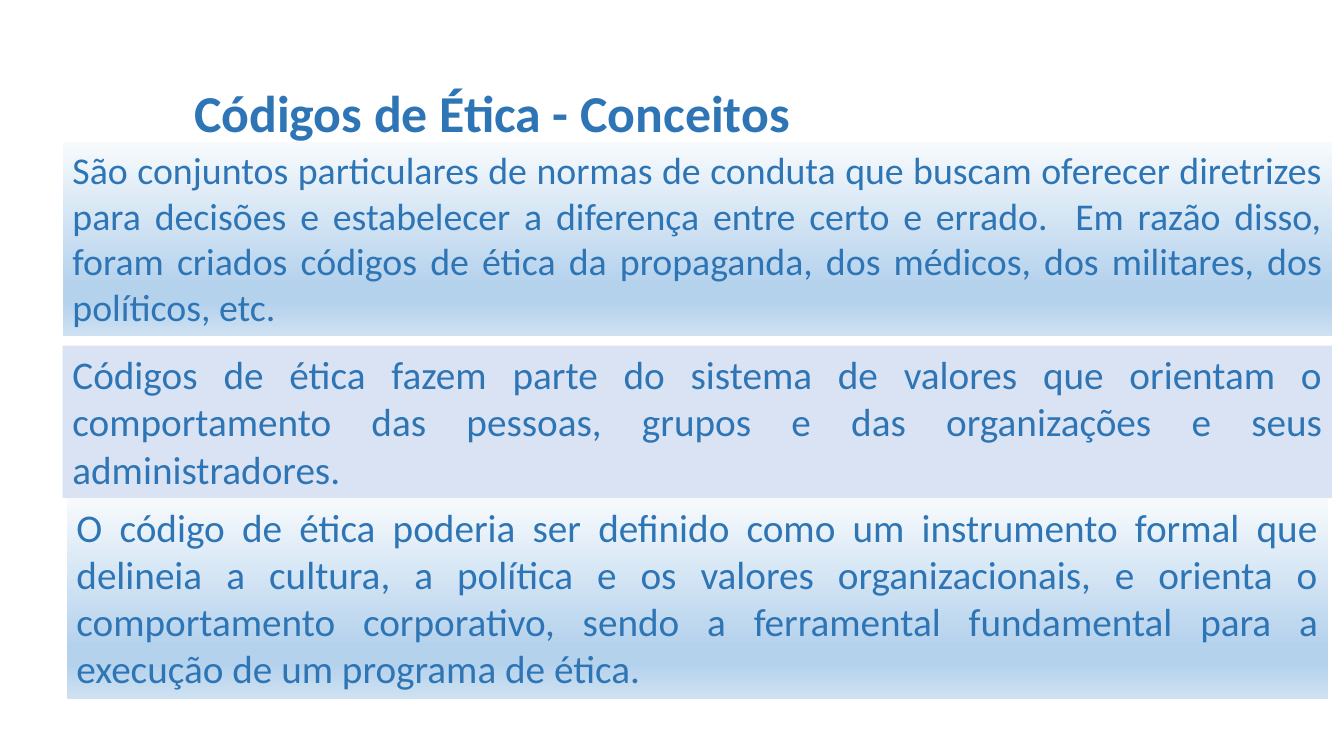
from pptx import Presentation
from pptx import util as u
from pptx.dml.color import RGBColor
from pptx.enum import shapes, text
from pptx.oxml import parse_xml
from pptx.oxml.ns import nsdecls, qn

FONT = "Calibri"
BLUE = "2E75B6"
LAVENDER = "DAE3F3"
SKY_STOPS = [(0, "F7FAFD"), (74, "B5D2EC"), (83, "B5D2EC"), (100, "CEE1F2")]

# Left, top, width, height, text size, fill, wording
PANELS = [
    (0.62, 1.41, 12.59, 1.92, 27, SKY_STOPS,
     "São conjuntos particulares de normas de conduta que buscam oferecer "
     "diretrizes para decisões e estabelecer a diferença entre certo e errado.  "
     "Em razão disso, foram criados códigos de ética da propaganda, dos médicos, "
     "dos militares, dos políticos, etc."),
    (0.62, 3.43, 12.59, 1.51, 28, LAVENDER,
     "Códigos de ética fazem parte do sistema de valores que orientam o "
     "comportamento das pessoas, grupos e das organizações e seus administradores."),
    (0.66, 4.94, 12.51, 1.99, 28, SKY_STOPS,
     "O código de ética poderia ser definido como um instrumento formal que "
     "delineia a cultura, a política e os valores organizacionais, e orienta o "
     "comportamento corporativo, sendo a ferramental fundamental para a execução "
     "de um programa de ética."),
]


def color(value):
    return RGBColor.from_string(value)


def write(box, wording, size, align, anchor, bold=False):
    frame = box.text_frame
    frame.word_wrap = True
    frame.auto_size = text.MSO_AUTO_SIZE.NONE
    frame.vertical_anchor = anchor
    frame.text = wording
    para = frame.paragraphs[0]
    para.alignment = align
    for span in para.runs:
        span.font.name = FONT
        span.font.size = u.Pt(size)
        span.font.bold = bold
        span.font.color.rgb = color(BLUE)
    return para


def fill_gradient(box, stops):
    box.fill.gradient()
    box.fill.gradient_angle = 270  # top to bottom
    stop_list = box.fill._xPr.find(f".//{qn('a:gsLst')}")
    for stop in list(stop_list):
        stop_list.remove(stop)
    for percent, value in stops:
        stop_list.append(parse_xml(
            f'<a:gs {nsdecls("a")} pos="{percent * 1000}">'
            f'<a:srgbClr val="{value}"/></a:gs>'))


def add_title(page, wording):
    title = page.shapes.title
    title.left, title.top = u.Inches(0.73), u.Inches(0.84)
    title.width, title.height = u.Inches(8.3), u.Inches(0.65)
    para = write(title, wording, 37, text.PP_ALIGN.CENTER,
                 text.MSO_ANCHOR.MIDDLE, bold=True)
    para.line_spacing = 0.8


def add_panel(page, left, top, width, height, size, fill, wording):
    box = page.shapes.add_shape(
        shapes.MSO_SHAPE.RECTANGLE, u.Inches(left), u.Inches(top),
        u.Inches(width), u.Inches(height))
    box.shadow.inherit = False
    box.line.fill.background()
    if isinstance(fill, str):
        box.fill.solid()
        box.fill.fore_color.rgb = color(fill)
    else:
        fill_gradient(box, fill)
    write(box, wording, size, text.PP_ALIGN.JUSTIFY, text.MSO_ANCHOR.TOP)


def main():
    deck = Presentation()
    deck.slide_width, deck.slide_height = u.Inches(13.33), u.Inches(7.5)
    page = deck.slides.add_slide(deck.slide_layouts[5])  # title only

    # Heading
    add_title(page, "Códigos de Ética - Conceitos")

    # Stacked definitions
    for panel in PANELS:
        add_panel(page, *panel)

    deck.save("out.pptx")


if __name__ == "__main__":
    main()
